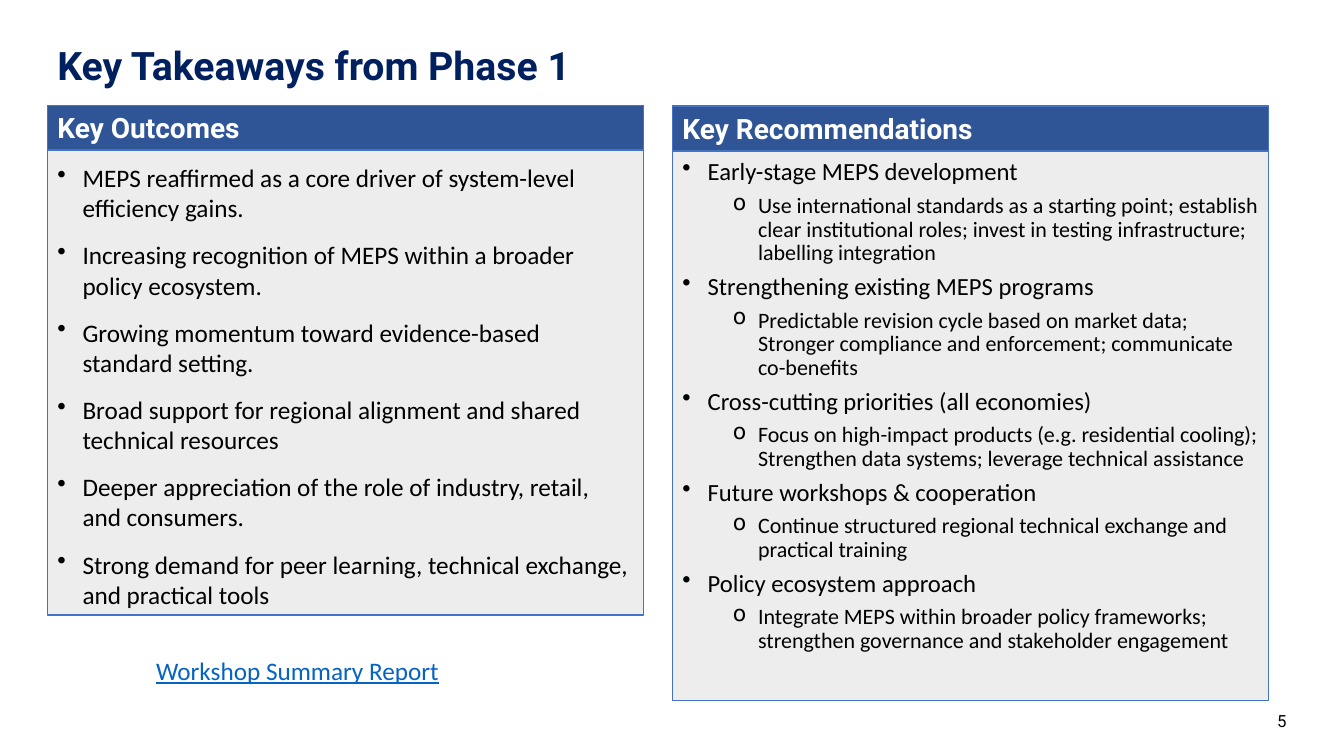
from dataclasses import dataclass

from lxml import etree
from pptx import Presentation
from pptx.dml.color import RGBColor
from pptx.enum.shapes import MSO_SHAPE
from pptx.enum.text import MSO_ANCHOR, PP_ALIGN
from pptx.oxml.ns import qn
from pptx.util import Inches, Pt

RECTANGLE = MSO_SHAPE.RECTANGLE
TOP, MIDDLE, BOTTOM = MSO_ANCHOR.TOP, MSO_ANCHOR.MIDDLE, MSO_ANCHOR.BOTTOM
LEFT, RIGHT = PP_ALIGN.LEFT, PP_ALIGN.RIGHT


@dataclass(frozen=True)
class Theme:
    heading_font: str = "Roboto"
    body_font: str = "Calibri"
    title: str = "002060"
    header_fill: str = "2F5597"
    header_text: str = "FFFFFF"
    panel_fill: str = "EDEDED"
    border: str = "4472C4"
    text: str = "000000"
    link: str = "0563C1"
    title_size: float = 28
    header_size: float = 20
    body_size: float = 18
    number_size: float = 12


@dataclass(frozen=True)
class BulletLevel:
    symbol: str
    indent: float
    size: float


@dataclass(frozen=True)
class Panel:
    heading: str
    left: float
    header_top: float
    height: float
    text_inset: float
    line_spacing: float
    gap: float
    levels: tuple[BulletLevel, ...]
    items: tuple[tuple[int, str], ...]


THEME = Theme()
PANEL_TOP, PANEL_WIDTH, HEADER_HEIGHT = 1.05, 5.91, 0.44
HANGING = 0.25

OUTCOMES = (
    "MEPS reaffirmed as a core driver of system-level efficiency gains.",
    "Increasing recognition of MEPS within a broader policy ecosystem.",
    "Growing momentum toward evidence-based standard setting.",
    "Broad support for regional alignment and shared technical resources",
    "Deeper appreciation of the role of industry, retail, and consumers.",
    "Strong demand for peer learning, technical exchange, and practical tools",
)
RECOMMENDATIONS = (
    (0, "Early-stage MEPS development"),
    (1, "Use international standards as a starting point; establish clear institutional "
        "roles; invest in testing infrastructure; labelling integration"),
    (0, "Strengthening existing MEPS programs"),
    (1, "Predictable revision cycle based on market data; Stronger compliance and "
        "enforcement; communicate co-benefits"),
    (0, "Cross-cutting priorities (all economies)"),
    (1, "Focus on high-impact products (e.g. residential cooling); Strengthen data "
        "systems; leverage technical assistance"),
    (0, "Future workshops & cooperation"),
    (1, "Continue structured regional technical exchange and practical training"),
    (0, "Policy ecosystem approach"),
    (1, "Integrate MEPS within broader policy frameworks; strengthen governance and "
        "stakeholder engagement"),
)
PANELS = (
    Panel("Key Outcomes", 0.47, 1.05, 5.05, 0.56, 1.0, 6,
          (BulletLevel("•", 0.25, THEME.body_size),),
          tuple((0, outcome) for outcome in OUTCOMES)),
    Panel("Key Recommendations", 6.67, 1.06, 5.9, 0.53, 0.9, 3,
          (BulletLevel("•", 0.25, 17.6), BulletLevel("o", 0.75, 15.7)),
          RECOMMENDATIONS),
)


def style_font(paragraph, face: str, size: float, color: str, bold: bool = False) -> None:
    font = paragraph.font
    font.name, font.size, font.bold = face, Pt(size), bold
    font.color.rgb = RGBColor.from_string(color)


def add_label(slide, text: str, left: float, top: float, width: float, height: float,
              face: str, size: float, color: str, bold: bool = False,
              anchor=TOP, align=LEFT, wrap: bool = True):
    """Add one line of free-standing text and return its paragraph."""
    label = slide.shapes.add_textbox(Inches(left), Inches(top), Inches(width), Inches(height))
    frame = label.text_frame
    frame.word_wrap, frame.vertical_anchor = wrap, anchor
    paragraph = frame.paragraphs[0]
    paragraph.text, paragraph.alignment = text, align
    style_font(paragraph, face, size, color, bold)
    return paragraph


def add_block(slide, left: float, top: float, height: float, fill: str):
    """Add a bordered rectangle of panel width and return its text frame."""
    block = slide.shapes.add_shape(RECTANGLE, Inches(left), Inches(top),
                                   Inches(PANEL_WIDTH), Inches(height))
    block.shadow.inherit = False
    block.fill.solid()
    block.fill.fore_color.rgb = RGBColor.from_string(fill)
    block.line.color.rgb = RGBColor.from_string(THEME.border)
    block.line.width = Pt(1)
    frame = block.text_frame
    frame.word_wrap, frame.vertical_anchor = True, TOP
    return frame


def set_bullet(paragraph, bullet: BulletLevel) -> None:
    properties = paragraph._p.get_or_add_pPr()
    properties.set("marL", str(Inches(bullet.indent)))
    properties.set("indent", str(-Inches(HANGING)))
    etree.SubElement(properties, qn("a:buChar")).set("char", bullet.symbol)


def add_panel(slide, panel: Panel) -> None:
    body = add_block(slide, panel.left, PANEL_TOP, panel.height, THEME.panel_fill)
    body.margin_top = Inches(panel.text_inset)
    for index, (level, text) in enumerate(panel.items):
        item = body.add_paragraph() if index else body.paragraphs[0]
        bullet = panel.levels[level]
        item.text, item.level, item.alignment = text, level, LEFT
        set_bullet(item, bullet)
        item.line_spacing = panel.line_spacing
        item.space_before = Pt(panel.gap if index else 0)
        item.space_after = Pt(panel.gap)
        style_font(item, THEME.body_font, bullet.size, THEME.text)

    header = add_block(slide, panel.left, panel.header_top, HEADER_HEIGHT, THEME.header_fill)
    heading = header.paragraphs[0]
    heading.text, heading.alignment = panel.heading, LEFT
    style_font(heading, THEME.heading_font, THEME.header_size, THEME.header_text, bold=True)


def main() -> None:
    presentation = Presentation()
    presentation.slide_width, presentation.slide_height = Inches(13.33), Inches(7.5)
    slide = presentation.slides.add_slide(presentation.slide_layouts[6])

    title = add_label(slide, "Key Takeaways from Phase 1", 0.47, 0.34, 12.39, 0.59,
                      THEME.heading_font, THEME.title_size, THEME.title,
                      bold=True, anchor=BOTTOM)
    title.line_spacing = 0.9
    for panel in PANELS:
        add_panel(slide, panel)
    report = add_label(slide, "Workshop Summary Report", 1.45, 6.45, 3.03, 0.4,
                       THEME.body_font, THEME.body_size, THEME.link, wrap=False)
    report.font.underline = True
    add_label(slide, "5", 9.86, 6.95, 3, 0.4, THEME.heading_font, THEME.number_size,
              THEME.text, anchor=MIDDLE, align=RIGHT)
    presentation.save("out.pptx")


if __name__ == "__main__":
    main()
